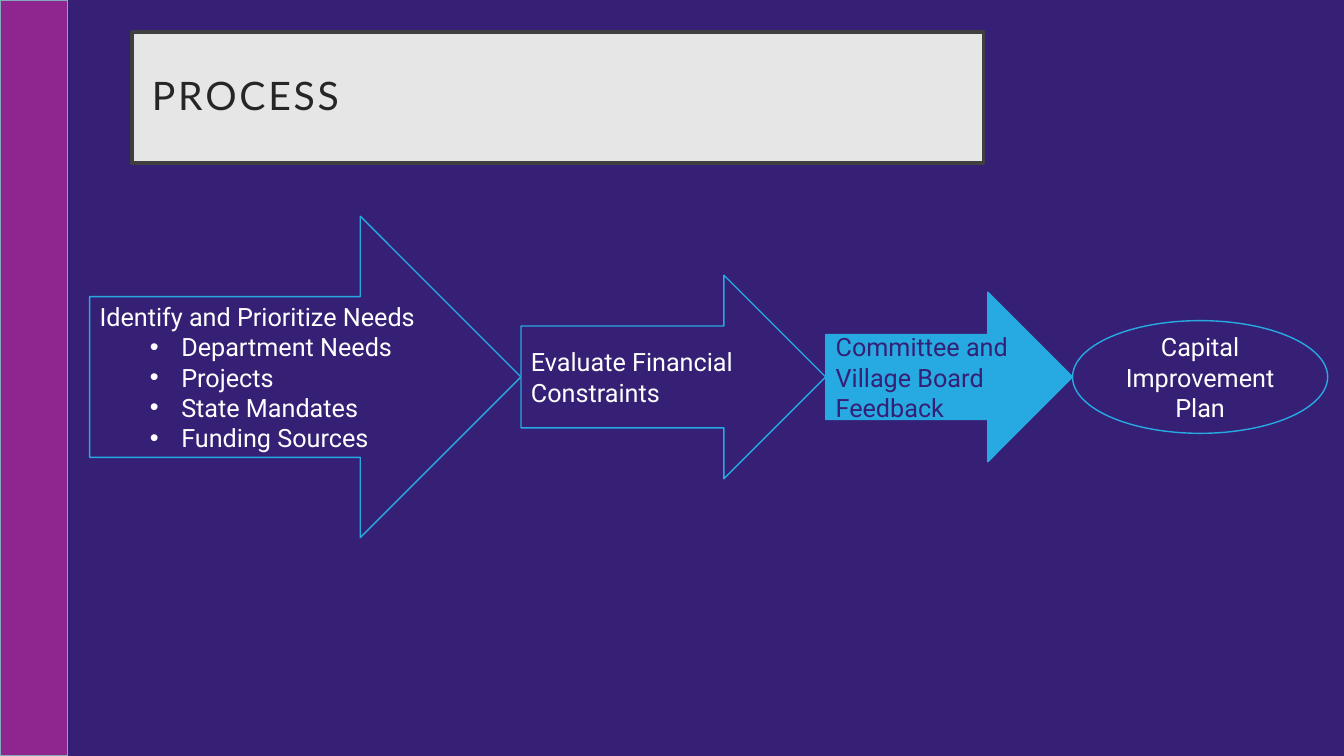
import pptx
import pptx.dml.color
import pptx.enum.shapes
import pptx.enum.text
import pptx.oxml
import pptx.oxml.ns
import pptx.util
from pptx.util import Cm

COLORS = {
    "background": "352076",
    "sidebar": "8F268F",
    "sidebar_line": "84A9B9",
    "title_fill": "E7E6E6",
    "title_line": "404040",
    "title_text": "262626",
    "accent": "27AAE1",
    "white": "FFFFFF",
}
SHAPES = pptx.enum.shapes.MSO_SHAPE
ALIGN = pptx.enum.text.PP_ALIGN
MIDDLE = pptx.enum.text.MSO_ANCHOR.MIDDLE

FLOW_LEFT = 2.26
FLOW_CENTER_Y = 9.5
NEEDS = ["Department Needs", "Projects", "State Mandates", "Funding Sources"]
# shape, width, height, fill, text colour, alignment, heading, bullets
STEPS = [
    (SHAPES.RIGHT_ARROW, 10.87, 8.1, "background", "white", ALIGN.LEFT,
     "Identify and Prioritize Needs", NEEDS),
    (SHAPES.RIGHT_ARROW, 7.68, 5.13, "background", "white", ALIGN.LEFT,
     "Evaluate Financial Constraints", []),
    (SHAPES.RIGHT_ARROW, 6.22, 4.27, "accent", "background", ALIGN.LEFT,
     "Committee and Village Board Feedback", []),
    (SHAPES.OVAL, 6.43, 2.84, "background", "white", ALIGN.CENTER,
     "Capital Improvement Plan", []),
]


def rgb(name):
    return pptx.dml.color.RGBColor.from_string(COLORS[name])


def paint(shape, fill, line, line_width):
    shape.fill.solid()
    shape.fill.fore_color.rgb = rgb(fill)
    shape.line.color.rgb = rgb(line)
    shape.line.width = pptx.util.Pt(line_width)


def add_painted_shape(slide, kind, left, top, width, height, fill, line):
    shape = slide.shapes.add_shape(kind, Cm(left), Cm(top), Cm(width), Cm(height))
    shape.shadow.inherit = False
    paint(shape, fill, line, 1)
    return shape


def add_run(paragraph, text, font_name, size, color):
    run = paragraph.add_run()
    run.text = text
    run.font.name = font_name
    run.font.size = pptx.util.Pt(size)
    run.font.color.rgb = rgb(color)
    return run


def make_bullet(paragraph):
    paragraph.level = 1
    properties = paragraph._p.get_or_add_pPr()
    properties.set("marL", str(Cm(2.06)))
    properties.set("indent", str(-Cm(0.79)))
    for tag, attribute, value in (("a:buFont", "typeface", "Arial"),
                                  ("a:buChar", "char", "•")):
        element = pptx.oxml.parse_xml(
            f'<{tag} {pptx.oxml.ns.nsdecls("a")} {attribute}="{value}"/>')
        properties.append(element)


def fill_title(title):
    title.left, title.top = Cm(3.33), Cm(0.81)
    title.width, title.height = Cm(21.46), Cm(3.3)
    paint(title, "title_fill", "title_line", 2.5)
    frame = title.text_frame
    frame.word_wrap = True
    frame.vertical_anchor = MIDDLE
    frame.margin_left = frame.margin_right = Cm(0.5)
    frame.margin_top = frame.margin_bottom = Cm(0.5)
    paragraph = frame.paragraphs[0]
    paragraph.alignment = ALIGN.LEFT
    paragraph.line_spacing = 0.9
    run = add_run(paragraph, "PROCESS", "Lato", 28, "title_text")
    run.font._element.set("spc", "200")


def add_step(slide, left, step):
    kind, width, height, fill, text_color, alignment, heading, bullets = step
    shape = add_painted_shape(slide, kind, left, FLOW_CENTER_Y - height / 2,
                              width, height, fill, "accent")
    frame = shape.text_frame
    frame.word_wrap = True
    frame.vertical_anchor = MIDDLE
    paragraph = frame.paragraphs[0]
    paragraph.alignment = alignment
    add_run(paragraph, heading, "Roboto", 18, text_color)
    for bullet in bullets:
        paragraph = frame.add_paragraph()
        make_bullet(paragraph)
        paragraph.alignment = alignment
        add_run(paragraph, bullet, "Roboto", 18, text_color)


def main():
    presentation = pptx.Presentation()
    presentation.slide_width, presentation.slide_height = Cm(33.87), Cm(19.05)
    slide = presentation.slides.add_slide(presentation.slide_layouts[5])
    slide.background.fill.solid()
    slide.background.fill.fore_color.rgb = rgb("background")

    add_painted_shape(slide, SHAPES.RECTANGLE, 0, 0, 1.71, 19.05,
                      "sidebar", "sidebar_line")
    fill_title(slide.shapes.title)
    left = FLOW_LEFT
    for step in STEPS:
        add_step(slide, left, step)
        left += step[1]

    presentation.save("out.pptx")


if __name__ == "__main__":
    main()
